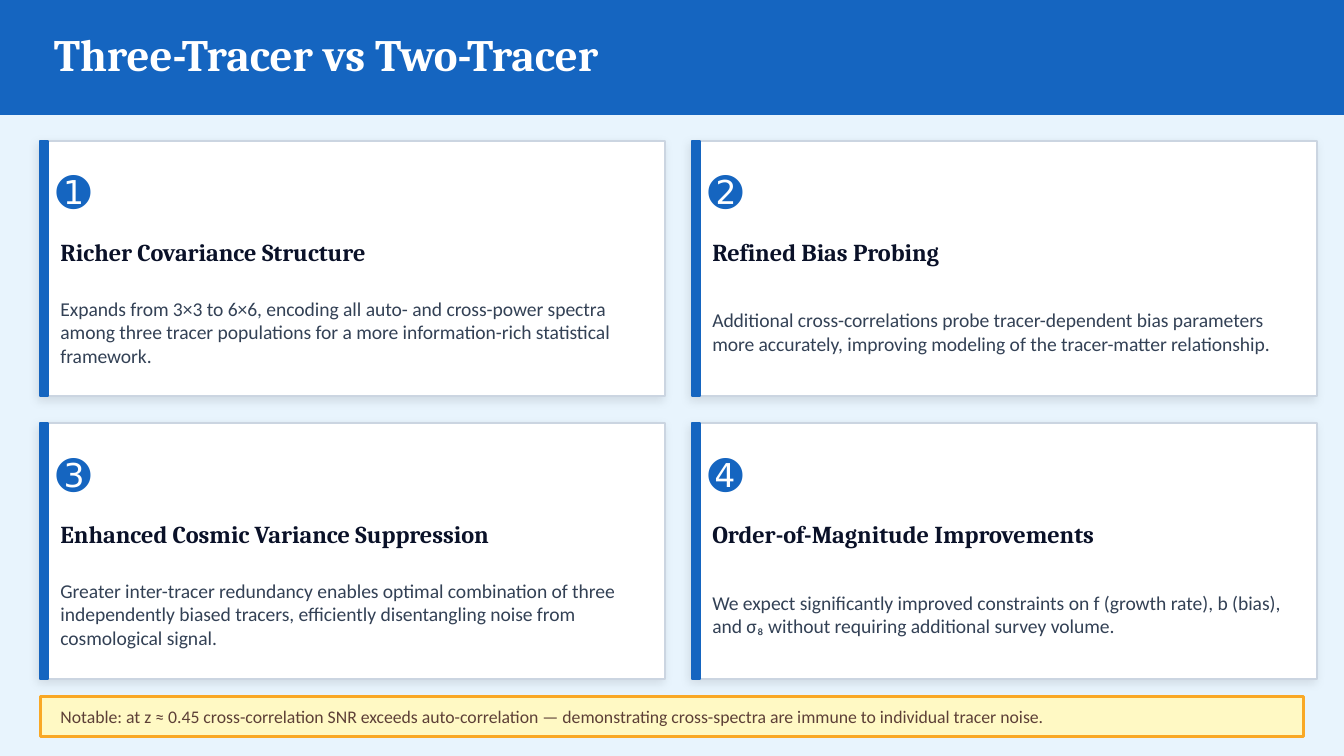
"""Build the slide that compares three-tracer with two-tracer analysis."""
from lxml import etree
from pptx import Presentation
from pptx.dml.color import RGBColor
from pptx.enum import shapes, text
from pptx.oxml import ns
from pptx.util import Pt

COLOURS = {
    "background": "E8F4FD",
    "accent": "1565C0",
    "white": "FFFFFF",
    "border": "CBD5E1",
    "heading": "0A1128",
    "body": "334155",
    "note_fill": "FFF9C4",
    "note_line": "F9A825",
    "note_text": "5D4037",
    "shadow": "000000",
}
CARDS = [
    ("➊", "Richer Covariance Structure",
     "Expands from 3×3 to 6×6, encoding all auto- and cross-power spectra among three "
     "tracer populations for a more information-rich statistical framework."),
    ("➋", "Refined Bias Probing",
     "Additional cross-correlations probe tracer-dependent bias parameters more "
     "accurately, improving modeling of the tracer-matter relationship."),
    ("➌", "Enhanced Cosmic Variance Suppression",
     "Greater inter-tracer redundancy enables optimal combination of three independently "
     "biased tracers, efficiently disentangling noise from cosmological signal."),
    ("➍", "Order-of-Magnitude Improvements",
     "We expect significantly improved constraints on f (growth rate), b (bias), and σ₈ "
     "without requiring additional survey volume."),
]
NOTE = ("Notable: at z ≈ 0.45 cross-correlation SNR exceeds auto-correlation — "
        "demonstrating cross-spectra are immune to individual tracer noise.")
MARGIN, CARD_TOP = 21.6, 75.6
CARD_WIDTH, CARD_HEIGHT, GAP = 334.8, 136.8, 14.4


def colour(name):
    return RGBColor.from_string(COLOURS[name])


def write(box, words, *, size, tint, font="Calibri", bold=False):
    frame = box.text_frame
    frame.word_wrap = True
    frame.auto_size = text.MSO_AUTO_SIZE.NONE
    frame.vertical_anchor = text.MSO_ANCHOR.MIDDLE
    frame.margin_left = frame.margin_right = frame.margin_top = frame.margin_bottom = 0
    para = frame.paragraphs[0]
    para.alignment = text.PP_ALIGN.LEFT
    span = para.add_run()
    span.text = words
    span.font.name = font
    span.font.size = Pt(size)
    span.font.bold = bold
    span.font.color.rgb = colour(tint)


def add_text(page, area, words, **style):
    write(page.shapes.add_textbox(*map(Pt, area)), words, **style)


def add_panel(page, area, fill, line, weight=1):
    panel = page.shapes.add_shape(shapes.MSO_SHAPE.RECTANGLE, *map(Pt, area))
    panel.shadow.inherit = False
    panel.fill.solid()
    panel.fill.fore_color.rgb = colour(fill)
    panel.line.color.rgb = colour(line)
    panel.line.width = Pt(weight)
    return panel


def add_shadow(panel):
    effects = panel.element.spPr.find(ns.qn("a:effectLst"))
    shadow = etree.SubElement(effects, ns.qn("a:outerShdw"), blurRad=str(Pt(5)),
                              dist=str(Pt(2)), dir=str(135 * 60000),
                              algn="bl", rotWithShape="0")
    tint = etree.SubElement(shadow, ns.qn("a:srgbClr"), val=COLOURS["shadow"])
    etree.SubElement(tint, ns.qn("a:alpha"), val="10000")


def add_header(page, words):
    band = add_panel(page, (0, 0, 720, 61.2), "accent", "accent")
    title = page.shapes.title
    title.left, title.top, title.width, title.height = map(Pt, (28.8, 8.64, 662.4, 39.6))
    write(title, words, size=24, tint="white", font="Cambria", bold=True)
    title.element.addprevious(band.element)


def add_card(page, left, top, number, heading, body):
    add_shadow(add_panel(page, (left, top, CARD_WIDTH, CARD_HEIGHT), "white", "border"))
    add_panel(page, (left, top, 4.32, CARD_HEIGHT), "accent", "accent")
    add_text(page, (left + 8.64, top + 7.2, 39.6, 39.6), number, size=22, tint="accent")
    add_text(page, (left + 10.8, top + 44.64, 316.8, 28.8), heading,
             size=13, tint="heading", font="Cambria", bold=True)
    add_text(page, (left + 10.8, top + 73.44, 316.8, 57.6), body, size=10.5, tint="body")


def add_note(page, words):
    add_panel(page, (MARGIN, 372.96, 676.8, 21.6), "note_fill", "note_line", 1.5)
    add_text(page, (MARGIN + 10.8, 373.68, 655.2, 20.16), words, size=9.5, tint="note_text")


def main():
    deck = Presentation()
    deck.slide_width, deck.slide_height = Pt(720), Pt(405)
    page = deck.slides.add_slide(deck.slide_layouts.get_by_name("Title Only"))
    page.background.fill.solid()
    page.background.fill.fore_color.rgb = colour("background")
    add_header(page, "Three-Tracer vs Two-Tracer")
    for index, card in enumerate(CARDS):
        row, column = divmod(index, 2)
        left = MARGIN + column * (CARD_WIDTH + GAP)
        top = CARD_TOP + row * (CARD_HEIGHT + GAP)
        add_card(page, left, top, *card)
    add_note(page, NOTE)
    deck.save("out.pptx")


if __name__ == "__main__":
    main()
